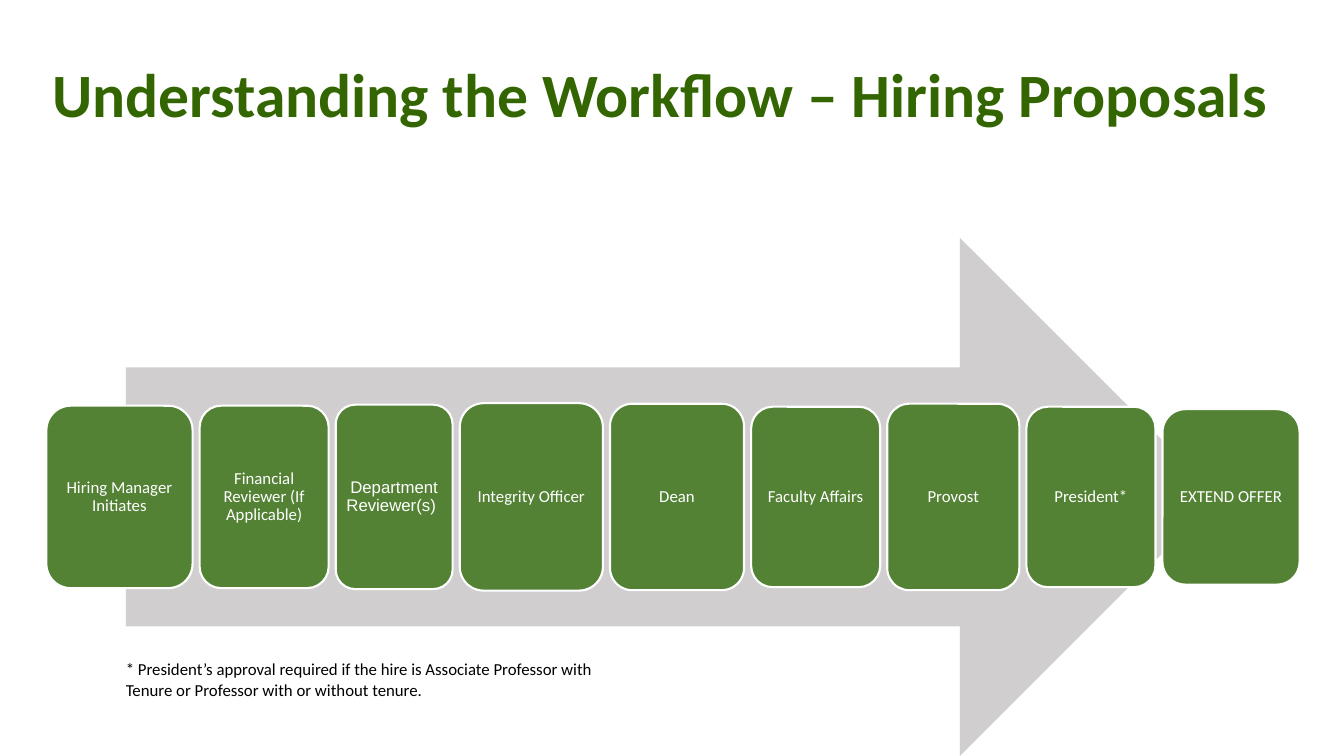
from pptx import Presentation
from pptx.dml.color import RGBColor
from pptx.enum.shapes import MSO_SHAPE
from pptx.enum.text import MSO_ANCHOR, PP_ALIGN
from pptx.util import Inches, Pt


def color(value):
    return RGBColor.from_string(value)


class WorkflowSlide:
    FONT = "Calibri"
    TITLE = "336600"
    ARROW = "D0CECE"
    STEP = "548235"
    WHITE = "FFFFFF"
    BLACK = "000000"

    def __init__(self, presentation):
        self.slide = presentation.slides.add_slide(presentation.slide_layouts[6])

    def set_text(self, shape, text, size, text_color, font=FONT, bold=False):
        shape.text_frame.word_wrap = True
        paragraph = shape.text_frame.paragraphs[0]
        paragraph.add_run().text = text
        paragraph.font.name = font
        paragraph.font.size = Pt(size)
        paragraph.font.bold = bold
        paragraph.font.color.rgb = color(text_color)
        return paragraph

    def text_box(self, left, top, width, height):
        return self.slide.shapes.add_textbox(
            Inches(left), Inches(top), Inches(width), Inches(height))

    def block(self, kind, left, top, width, height, fill):
        shape = self.slide.shapes.add_shape(
            kind, Inches(left), Inches(top), Inches(width), Inches(height))
        shape.shadow.inherit = False
        shape.fill.solid()
        shape.fill.fore_color.rgb = color(fill)
        shape.line.fill.background()
        return shape

    def title(self, text):
        box = self.text_box(0.42, 0.24, 12.29, 1.45)
        box.text_frame.vertical_anchor = MSO_ANCHOR.MIDDLE
        paragraph = self.set_text(box, text, 44, self.TITLE, bold=True)
        paragraph.line_spacing = 0.9

    def arrow(self, left, top, width, height):
        self.block(MSO_SHAPE.RIGHT_ARROW, left, top, width, height, self.ARROW)

    def step(self, left, top, width, height, text, font):
        shape = self.block(MSO_SHAPE.ROUNDED_RECTANGLE, left, top, width, height, self.STEP)
        shape.line.color.rgb = color(self.WHITE)
        shape.line.width = Pt(1.5)
        frame = shape.text_frame
        frame.vertical_anchor = MSO_ANCHOR.MIDDLE
        frame.margin_left = frame.margin_right = Inches(0.05)
        frame.margin_top = frame.margin_bottom = Inches(0.05)
        paragraph = self.set_text(shape, text, 12, self.WHITE, font)
        paragraph.alignment = PP_ALIGN.CENTER
        paragraph.line_spacing = 0.9

    def footnote(self, text):
        box = self.text_box(0.65, 6.49, 5.46, 0.5)
        paragraph = self.set_text(box, text, 12, self.BLACK)
        paragraph.level = 1
        properties = paragraph._p.get_or_add_pPr()
        properties.set("marL", str(Inches(0.5)))
        properties.set("indent", "0")


# Approval steps: text, width, height, font
STEPS = [
    ("Hiring Manager Initiates", 1.45, 1.81, "Calibri"),
    ("Financial Reviewer (If Applicable)", 1.28, 1.81, "Calibri"),
    ("Department Reviewer(s)\t", 1.16, 1.83, "Arial"),
    ("Integrity Officer", 1.42, 1.86, "Calibri"),
    ("Dean", 1.33, 1.85, "Calibri"),
    ("Faculty Affairs", 1.28, 1.79, "Calibri"),
    ("Provost", 1.31, 1.85, "Calibri"),
    ("President*", 1.28, 1.79, "Calibri"),
    ("EXTEND OFFER", 1.36, 1.74, "Calibri"),
]
STEP_GAP = 0.07
ARROW_TOP, ARROW_HEIGHT = 2.36, 5.14


def main():
    presentation = Presentation()
    presentation.slide_width = Inches(13.33)
    presentation.slide_height = Inches(7.5)
    workflow = WorkflowSlide(presentation)

    # Title and background arrow
    workflow.title("Understanding the Workflow – Hiring Proposals")
    workflow.arrow(1.25, ARROW_TOP, 10.84, ARROW_HEIGHT)

    # Steps run left to right, centred on the arrow
    middle = ARROW_TOP + ARROW_HEIGHT / 2
    left = 0.46
    for text, width, height, font in STEPS:
        workflow.step(left, middle - height / 2, width, height, text, font)
        left += width + STEP_GAP

    # Footnote
    workflow.footnote("* President’s approval required if the hire is Associate Professor "
                      "with Tenure or Professor with or without tenure.")

    presentation.save("out.pptx")


if __name__ == "__main__":
    main()
